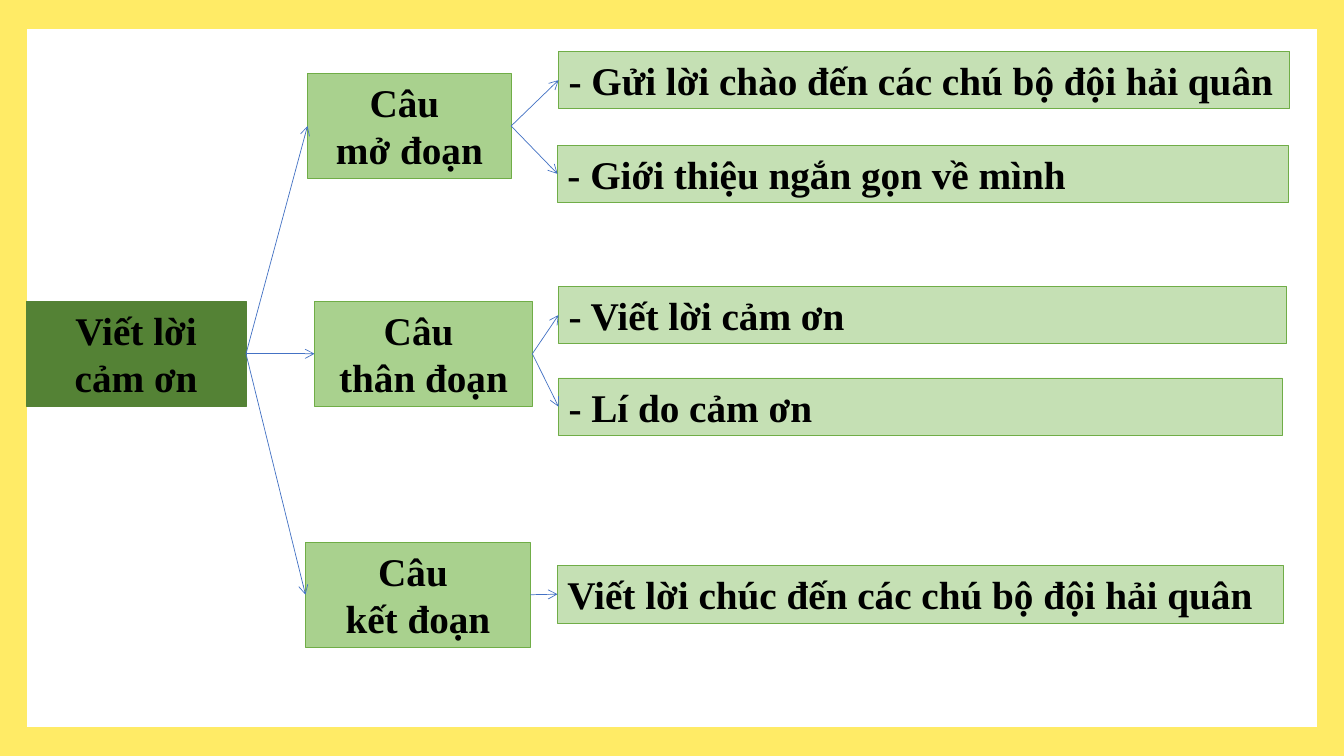
from lxml import etree
from pptx import Presentation
from pptx.dml.color import RGBColor
from pptx.enum import shapes, text
from pptx.oxml.ns import qn
from pptx.util import Inches, Pt

LEFT, CENTER, JUSTIFY = text.PP_ALIGN.LEFT, text.PP_ALIGN.CENTER, text.PP_ALIGN.JUSTIFY
TOPIC_H, DETAIL_H = 1.04, 0.57

prs = Presentation()
prs.slide_width, prs.slide_height = Inches(13.33), Inches(7.5)
slide = prs.slides.add_slide(prs.slide_layouts[6])


def add_box(left, top, width, height, fill, line=None, lines=(), align=CENTER):
    box = slide.shapes.add_shape(shapes.MSO_SHAPE.RECTANGLE, Inches(left), Inches(top),
                                 Inches(width), Inches(height))
    box.shadow.inherit = False
    box.fill.solid()
    box.fill.fore_color.rgb = RGBColor.from_string(fill)
    if line is None:
        box.line.fill.background()
        return
    box.line.color.rgb = RGBColor.from_string(line)
    box.line.width = Pt(0.5)
    frame = box.text_frame
    frame.word_wrap = True
    frame.auto_size = text.MSO_AUTO_SIZE.SHAPE_TO_FIT_TEXT
    frame.vertical_anchor = text.MSO_ANCHOR.TOP
    frame.text = "\n".join(lines)
    for paragraph in frame.paragraphs:
        paragraph.alignment = align
        font = paragraph.runs[0].font
        font.name, font.size, font.bold = "Times New Roman", Pt(28), True
        font.color.rgb = RGBColor.from_string("000000")


def add_arrow(start_x, start_y, end_x, end_y):
    arrow = slide.shapes.add_connector(shapes.MSO_CONNECTOR.STRAIGHT, Inches(start_x),
                                       Inches(start_y), Inches(end_x), Inches(end_y))
    arrow.line.color.rgb = RGBColor.from_string("4472C4")
    arrow.line.width = Pt(0.5)
    etree.SubElement(arrow.line._get_or_add_ln(), qn("a:tailEnd"), type="arrow")
    etree.SubElement(arrow._element.spPr, qn("a:effectLst"))


# Yellow frame around a white page
add_box(0, 0, 13.33, 7.5, "FFEB66")
add_box(0.27, 0.29, 12.79, 6.92, "FFFFFF")

# Main idea
idea_left, idea_top, idea_width = 0.26, 2.99, 2.18
add_box(idea_left, idea_top, idea_width, TOPIC_H, "548235", "548235", ["Viết lời cảm ơn"])
idea_right, idea_middle = idea_left + idea_width, idea_top + TOPIC_H / 2

# Topic: left, top, width, second line, details (left, top, width, wording, alignment)
topics = [
    (3.05, 0.73, 2.02, "mở đoạn", [
        (5.54, 0.51, 7.25, "- Gửi lời chào đến các chú bộ đội hải quân", LEFT),
        (5.53, 1.44, 7.25, "- Giới thiệu ngắn gọn về mình", LEFT)]),
    (3.12, 2.99, 2.16, "thân đoạn", [
        (5.54, 2.84, 7.22, "- Viết lời cảm ơn", JUSTIFY),
        (5.54, 3.75, 7.18, "- Lí do cảm ơn", JUSTIFY)]),
    (3.03, 5.38, 2.23, "kết đoạn", [
        (5.53, 5.61, 7.2, "Viết lời chúc đến các chú bộ đội hải quân", JUSTIFY)]),
]
for left, top, width, part, details in topics:
    add_box(left, top, width, TOPIC_H, "A9D18E", "70AD47", ["Câu ", part])
    middle = top + TOPIC_H / 2
    add_arrow(idea_right, idea_middle, left, middle)
    for detail_left, detail_top, detail_width, wording, align in details:
        add_box(detail_left, detail_top, detail_width, DETAIL_H, "C5E0B4", "70AD47",
                [wording], align)
        add_arrow(left + width, middle, detail_left, detail_top + DETAIL_H / 2)

prs.save("out.pptx")
